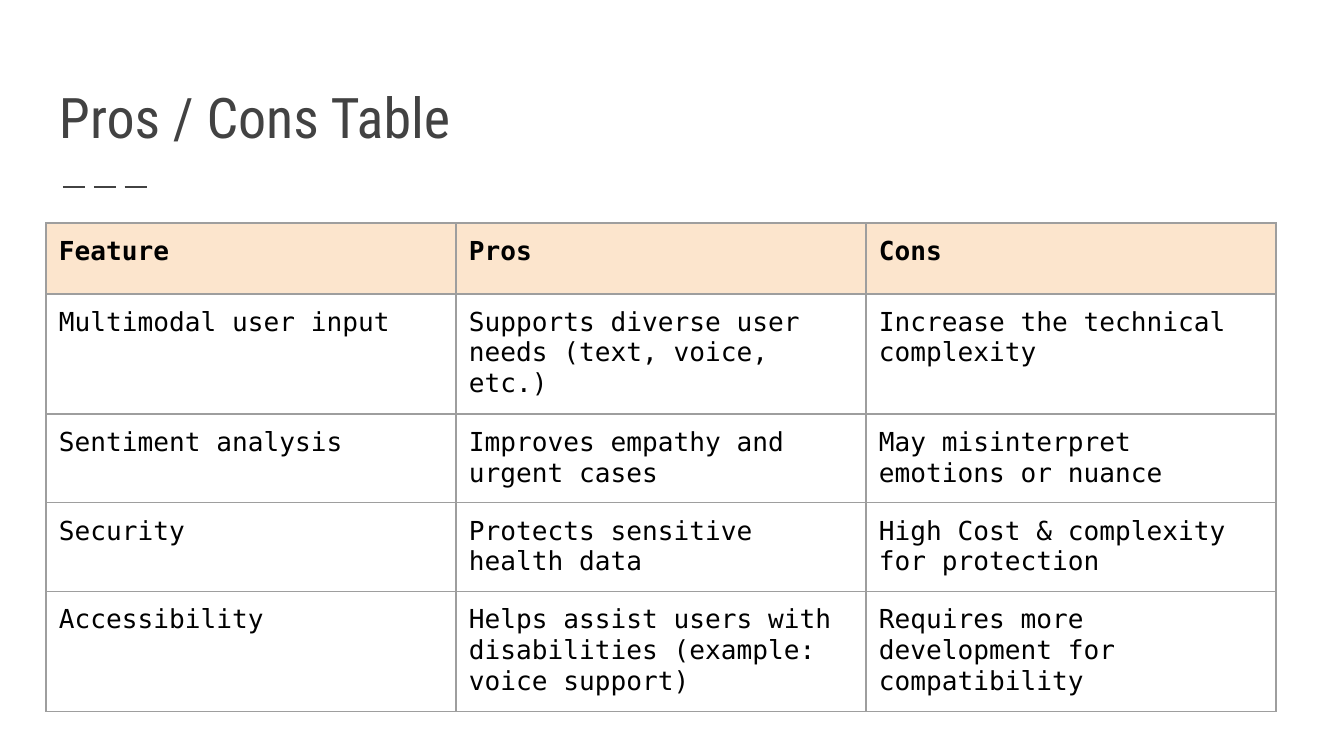
from dataclasses import dataclass

from lxml import etree
from pptx import Presentation
from pptx.dml.color import RGBColor
from pptx.enum.dml import MSO_LINE
from pptx.enum.shapes import MSO_CONNECTOR
from pptx.enum.text import MSO_ANCHOR
from pptx.oxml.ns import qn
from pptx.util import Emu, Pt

LONG_DASH = MSO_LINE.LONG_DASH
STRAIGHT = MSO_CONNECTOR.STRAIGHT
BOTTOM = MSO_ANCHOR.BOTTOM

# Content
TITLE = "Pros / Cons Table"
ROWS = [
    ("Feature", "Pros", "Cons"),
    ("Multimodal user input",
     "Supports diverse user needs (text, voice, etc.)",
     "Increase the technical complexity"),
    ("Sentiment analysis",
     "Improves empathy and urgent cases",
     "May misinterpret emotions or nuance"),
    ("Security",
     "Protects sensitive health data",
     "High Cost & complexity for protection"),
    ("Accessibility",
     "Helps assist users with disabilities (example: voice support)",
     "Requires more development for compatibility"),
]

# Layout in px
PAGE_WIDTH, PAGE_HEIGHT = 1344, 756
TITLE_AREA = (46, 55, 1252, 108)
RULE_LEFT, RULE_RIGHT, RULE_TOP = 63, 153, 187
TABLE_LEFT, TABLE_TOP = 46, 223
COLUMN_WIDTH = 410
ROW_HEIGHTS = [71, 119, 88, 88, 120]
INSET = 13


@dataclass(frozen=True)
class Theme:
    title_font: str = "Roboto Condensed"
    body_font: str = "DejaVu Sans Mono"
    title_size: int = 30
    body_size: int = 14
    title: str = "424242"
    body: str = "000000"
    header_fill: str = "FCE5CD"
    border: str = "9E9E9E"
    rule_width: float = 1.5
    border_width: float = 0.75


THEME = Theme()


def px(length):
    return Emu(round(length * 914400 / 134.4))


def set_font(para, name, size, color, bold=False):
    font = para.font
    font.name, font.size, font.bold = name, Pt(size), bold
    font.color.rgb = RGBColor.from_string(color)


def set_insets(target):
    target.margin_left = target.margin_right = px(INSET)
    target.margin_top = target.margin_bottom = px(INSET)


def set_borders(cell):
    properties = cell._tc.get_or_add_tcPr()
    for index, side in enumerate(("a:lnL", "a:lnR", "a:lnT", "a:lnB")):
        line = etree.Element(qn(side), w=str(Pt(THEME.border_width)))
        fill = etree.SubElement(line, qn("a:solidFill"))
        etree.SubElement(fill, qn("a:srgbClr"), val=THEME.border)
        properties.insert(index, line)


def add_title(page):
    box = page.shapes.add_textbox(*map(px, TITLE_AREA))
    frame = box.text_frame
    frame.word_wrap = True
    frame.vertical_anchor = BOTTOM
    set_insets(frame)
    frame.text = TITLE
    set_font(frame.paragraphs[0], THEME.title_font, THEME.title_size, THEME.title)


def add_rule(page):
    rule = page.shapes.add_connector(
        STRAIGHT, px(RULE_LEFT), px(RULE_TOP), px(RULE_RIGHT), px(RULE_TOP))
    rule.line.color.rgb = RGBColor.from_string(THEME.title)
    rule.line.width = Pt(THEME.rule_width)
    rule.line.dash_style = LONG_DASH
    etree.SubElement(rule._element.spPr, qn("a:effectLst"))


def add_comparison(page):
    column_count = len(ROWS[0])
    table = page.shapes.add_table(
        len(ROWS), column_count, px(TABLE_LEFT), px(TABLE_TOP),
        px(COLUMN_WIDTH * column_count), px(sum(ROW_HEIGHTS))).table
    table.horz_banding = False
    for column in table.columns:
        column.width = px(COLUMN_WIDTH)
    for row_index, (texts, height) in enumerate(zip(ROWS, ROW_HEIGHTS)):
        is_header = row_index == 0
        table.rows[row_index].height = px(height)
        for cell, text in zip(table.rows[row_index].cells, texts):
            cell.text = text
            set_insets(cell)
            set_font(cell.text_frame.paragraphs[0], THEME.body_font,
                     THEME.body_size, THEME.body, is_header)
            if is_header:
                cell.fill.solid()
                cell.fill.fore_color.rgb = RGBColor.from_string(THEME.header_fill)
            else:
                cell.fill.background()
            set_borders(cell)


def main():
    deck = Presentation()
    deck.slide_width, deck.slide_height = px(PAGE_WIDTH), px(PAGE_HEIGHT)
    page = deck.slides.add_slide(deck.slide_layouts[6])
    add_rule(page)
    add_title(page)
    add_comparison(page)
    deck.save("out.pptx")


if __name__ == "__main__":
    main()
